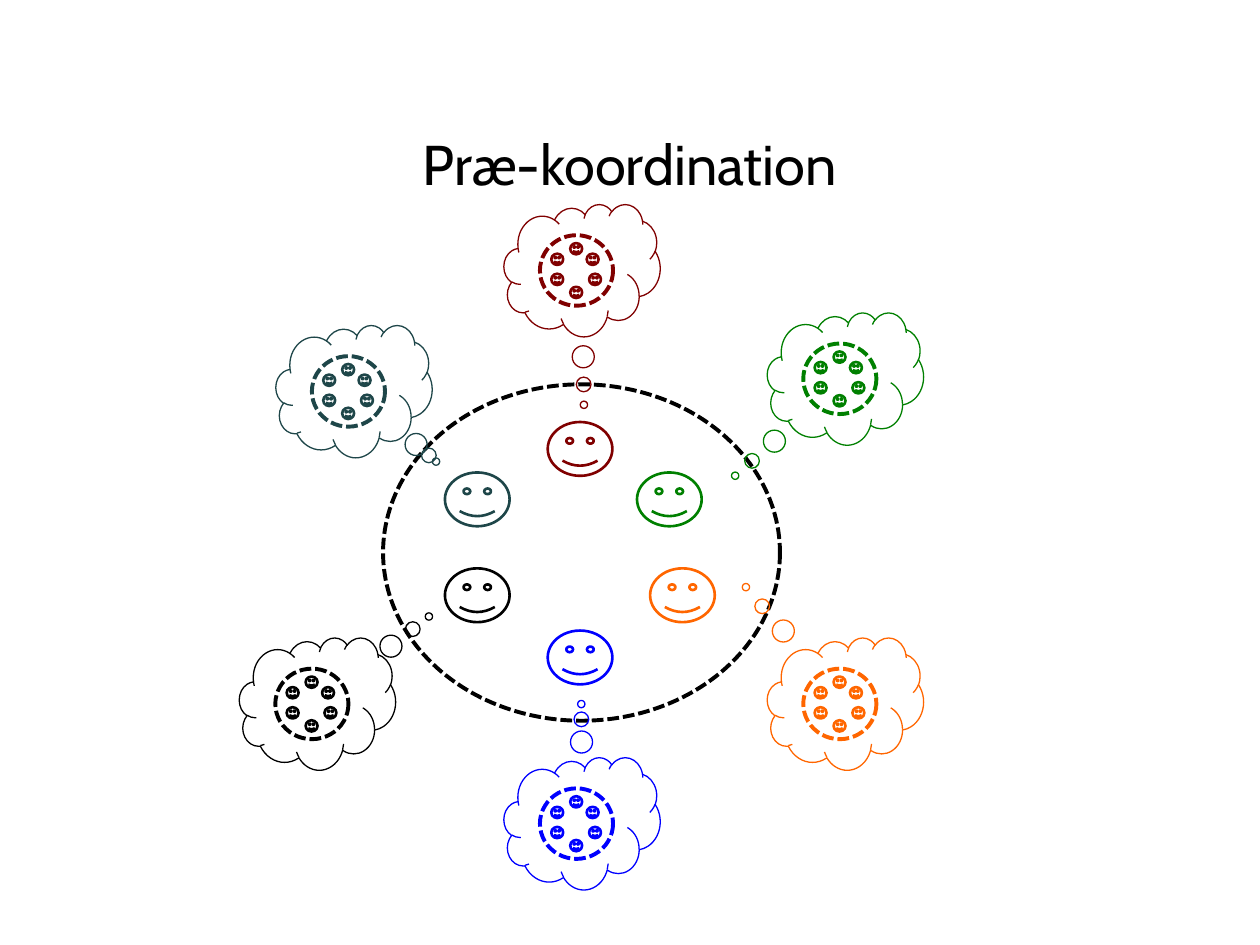
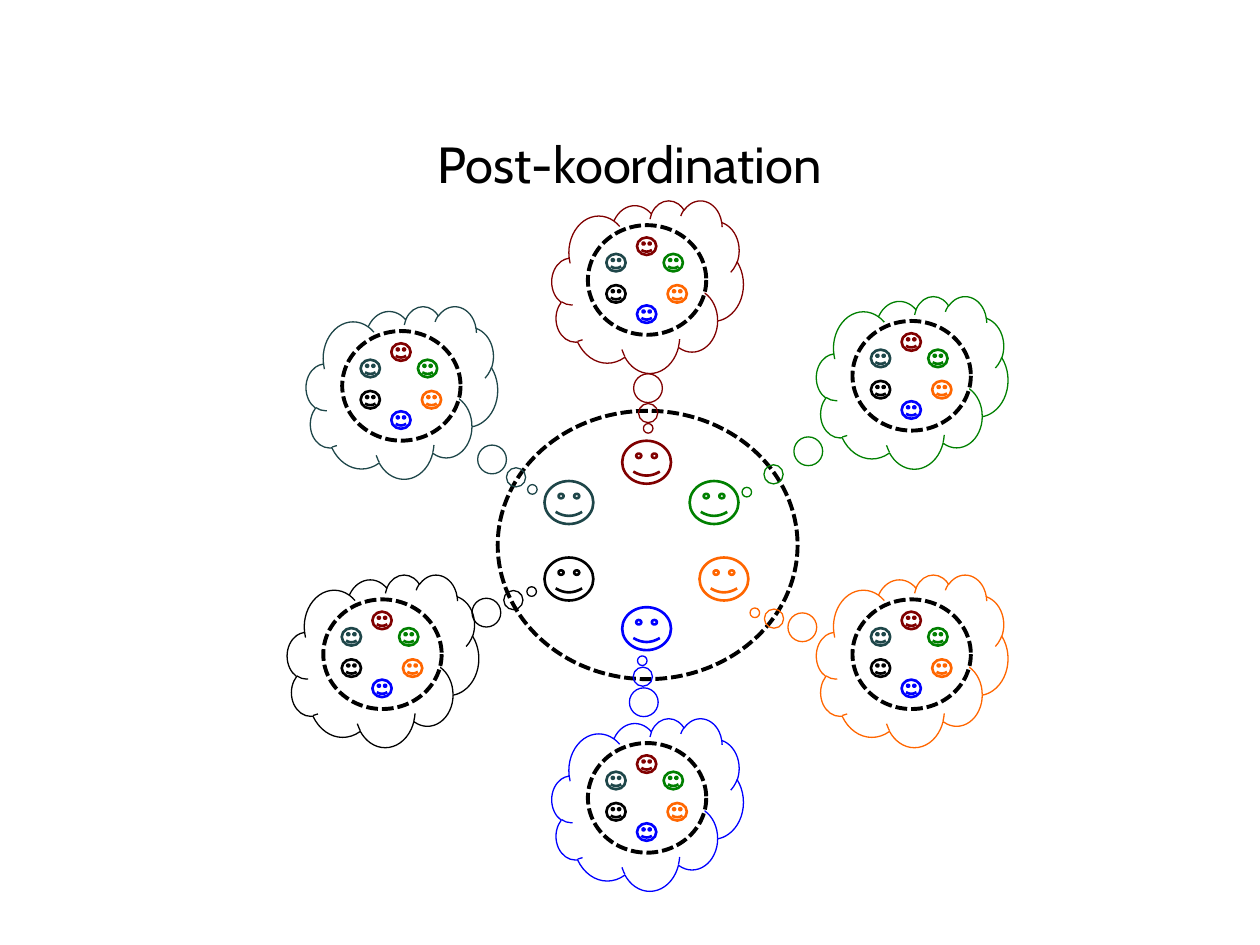
from collections import namedtuple

from pptx import Presentation
from pptx.dml.color import RGBColor
from pptx.enum.dml import MSO_LINE
from pptx.enum.shapes import MSO_SHAPE as Shape
from pptx.enum.text import MSO_ANCHOR as Anchor, PP_ALIGN as Align
from pptx.util import Inches, Pt

MAROON = RGBColor(0x80, 0x00, 0x00)
GREEN = RGBColor(0x00, 0x80, 0x00)
ORANGE = RGBColor(0xFF, 0x66, 0x00)
TEAL = RGBColor(0x1E, 0x46, 0x49)
BLACK = RGBColor(0x00, 0x00, 0x00)
BLUE = RGBColor(0x00, 0x00, 0xFF)
WHITE = RGBColor(0xFF, 0xFF, 0xFF)

# Lengths are columns and rows of a 100 x 75 grid
COLUMNS, ROWS = 100, 75

Box = namedtuple("Box", "left top width height")
Thought = namedtuple("Thought", "color left top tail_x tail_y")

# Place of each person in a ring, as shares of the ring's size
SEATS = {
    MAROON: (0.415, 0.112),
    GREEN: (0.64, 0.262),
    ORANGE: (0.673, 0.547),
    TEAL: (0.156, 0.262),
    BLACK: (0.156, 0.547),
    BLUE: (0.415, 0.732),
}
FACE_SHARE = (0.163, 0.16)
SMILE = 0.0465


def inside(outer, left, top, width, height):
    """Return the box that takes the given shares of the outer box."""
    return Box(outer.left + left * outer.width, outer.top + top * outer.height,
               width * outer.width, height * outer.height)


class CoordinationDeck:
    font_name = "Cabin"
    title_box = Box(5, 7.6, 90, 10.7)
    thin, medium, thick = Pt(0.75), Pt(1.5), Pt(2.25)

    def __init__(self):
        self.presentation = Presentation()
        self.presentation.slide_width = Inches(10)
        self.presentation.slide_height = Inches(7.5)
        self.slide = None

    def place(self, box):
        column = self.presentation.slide_width / COLUMNS
        row = self.presentation.slide_height / ROWS
        return (round(box.left * column), round(box.top * row),
                round(box.width * column), round(box.height * row))

    def add_slide(self):
        blank_layout = self.presentation.slide_layouts[6]
        self.slide = self.presentation.slides.add_slide(blank_layout)
        self.slide.background.fill.solid()
        self.slide.background.fill.fore_color.rgb = WHITE

    def title(self, text, size):
        frame = self.slide.shapes.add_textbox(*self.place(self.title_box)).text_frame
        frame.word_wrap = True
        frame.vertical_anchor = Anchor.MIDDLE
        paragraph = frame.paragraphs[0]
        paragraph.alignment = Align.CENTER
        run = paragraph.add_run()
        run.text = text
        run.font.name = self.font_name
        run.font.size = Pt(size)
        run.font.color.rgb = BLACK

    def outline(self, shapes, kind, box, color, weight, adjustments=()):
        shape = shapes.add_shape(kind, *self.place(box))
        shape.shadow.inherit = False
        shape.fill.background()
        shape.line.color.rgb = color
        shape.line.width = weight
        for index, value in enumerate(adjustments):
            shape.adjustments[index] = value
        return shape

    def crowd(self, shapes, box, ring_color, face_color=None):
        """Draw a dashed ring of people, all in face_color if one is given."""
        ring = self.outline(shapes, Shape.OVAL, box, ring_color, self.thick)
        ring.rotation = 180
        ring.fill.solid()
        ring.fill.fore_color.rgb = WHITE
        ring.line.dash_style = MSO_LINE.SQUARE_DOT
        for person_color, seat in SEATS.items():
            self.outline(shapes, Shape.SMILEY_FACE, inside(box, *seat, *FACE_SHARE),
                         face_color or person_color, self.medium, [SMILE])

    def thought(self, thought, cloud_size, ring_share, shared_view):
        """Draw a thought cloud holding the thinker's view of the crowd."""
        shapes = self.slide.shapes.add_group_shape().shapes
        cloud = Box(thought.left, thought.top, *cloud_size)
        self.outline(shapes, Shape.CLOUD_CALLOUT, cloud, thought.color, self.thin,
                     [thought.tail_x, thought.tail_y])
        ring = inside(cloud, *ring_share)
        if shared_view:
            self.crowd(shapes, ring, BLACK)
        else:
            self.crowd(shapes, ring, thought.color, thought.color)

    def coordination(self, title, title_size, meeting, cloud_size, ring_share,
                     shared_view, thoughts):
        self.add_slide()
        self.title(title, title_size)
        self.crowd(self.slide.shapes.add_group_shape().shapes, meeting, BLACK)
        for thought in thoughts:
            self.thought(thought, cloud_size, ring_share, shared_view)


def main():
    deck = CoordinationDeck()

    # Before coordination: everyone sees the group in their own colour
    deck.coordination(
        "Præ-koordination", 32,
        meeting=Box(30.4, 30.5, 31.5, 26.7),
        cloud_size=(12.4, 10.5),
        ring_share=(0.23, 0.235, 0.468, 0.533),
        shared_view=False,
        thoughts=[
            Thought(MAROON, 40, 16.2, 0.012, 1.017),
            Thought(GREEN, 60.9, 24.8, -0.706, 0.734),
            Thought(ORANGE, 60.9, 50.6, -0.637, -0.881),
            Thought(BLUE, 40, 60.1, -0.005, -0.902),
            Thought(BLACK, 19, 50.6, 0.713, -0.659),
            Thought(TEAL, 21.9, 25.8, 0.525, 0.532),
        ])

    # After coordination: everyone shares the same view of the group
    deck.coordination(
        "Post-koordination", 29,
        meeting=Box(39.5, 32.6, 23.8, 21.3),
        cloud_size=(15.2, 13.7),
        ring_share=(0.188, 0.144, 0.618, 0.635),
        shared_view=True,
        thoughts=[
            Thought(GREEN, 64.8, 23.5, -0.864, 0.636),
            Thought(ORANGE, 64.8, 45.6, -0.822, -0.278),
            Thought(BLUE, 43.8, 57, -0.028, -0.833),
            Thought(BLACK, 22.8, 45.6, 0.776, -0.401),
            Thought(TEAL, 24.3, 24.3, 0.681, 0.562),
            Thought(MAROON, 43.8, 15.9, 0.003, 0.821),
        ])

    deck.presentation.save("out.pptx")


if __name__ == "__main__":
    main()
